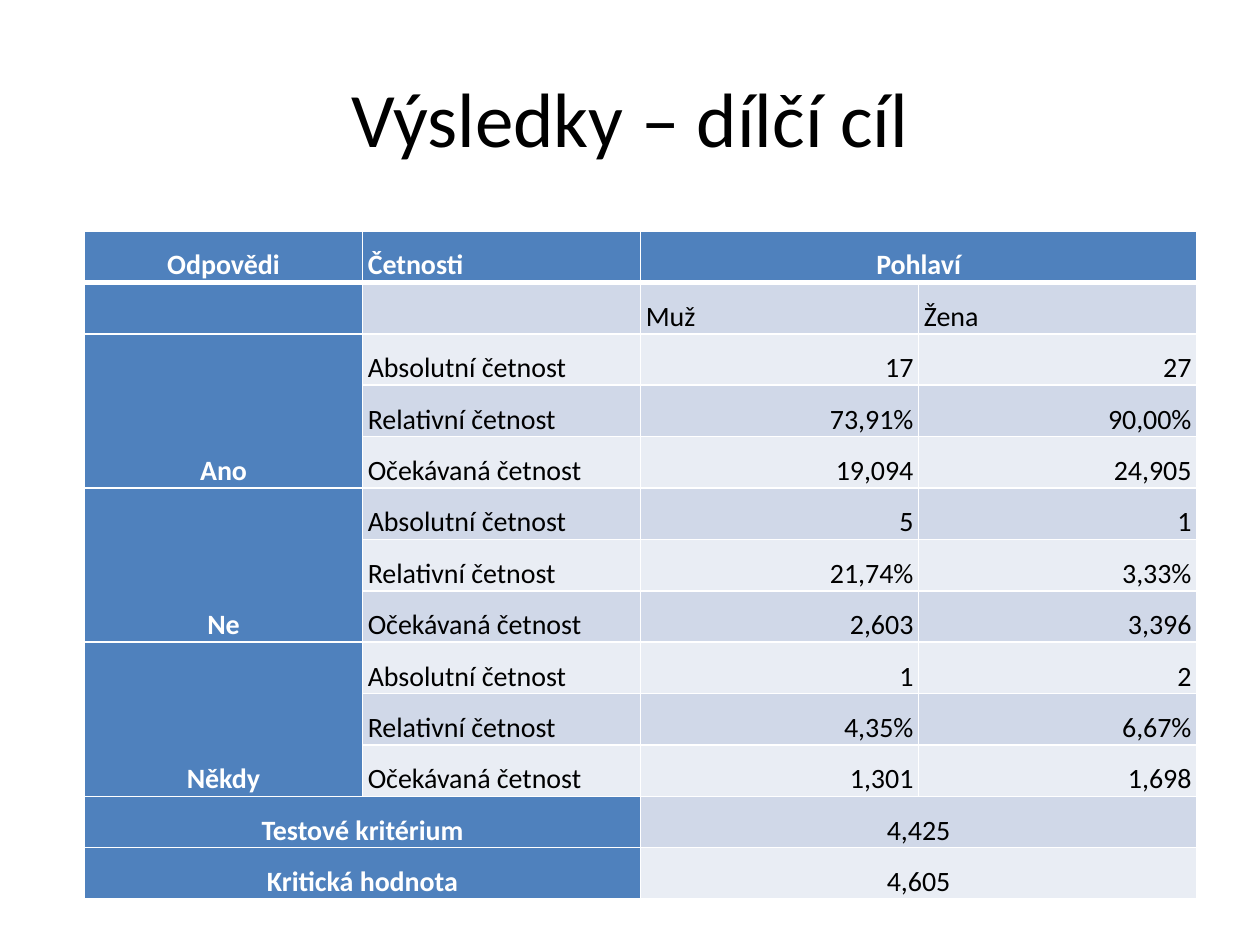
from lxml import etree
from pptx import Presentation
from pptx.dml.color import RGBColor
from pptx.enum.text import MSO_ANCHOR, PP_ALIGN
from pptx.oxml.ns import qn
from pptx.util import Pt

LEFT, CENTER, RIGHT = PP_ALIGN.LEFT, PP_ALIGN.CENTER, PP_ALIGN.RIGHT
MIDDLE, BOTTOM = MSO_ANCHOR.MIDDLE, MSO_ANCHOR.BOTTOM

BLACK = RGBColor(0x00, 0x00, 0x00)
WHITE = RGBColor(0xFF, 0xFF, 0xFF)
BLUE = RGBColor(0x4F, 0x81, 0xBD)
BANDS = (RGBColor(0xE9, 0xED, 0xF4), RGBColor(0xD0, 0xD8, 0xE8))

FONT = "Calibri"
COLUMN_WIDTH = Pt(158.9)
ROW_HEIGHT = Pt(29.3)

FREQUENCIES = ("Absolutní četnost", "Relativní četnost", "Očekávaná četnost")
ANSWERS = {
    "Ano": (("17", "27"), ("73,91%", "90,00%"), ("19,094", "24,905")),
    "Ne": (("5", "1"), ("21,74%", "3,33%"), ("2,603", "3,396")),
    "Někdy": (("1", "2"), ("4,35%", "6,67%"), ("1,301", "1,698")),
}
SUMMARY = (("Testové kritérium", "4,425"), ("Kritická hodnota", "4,605"))


def format_text(para, size, color, align, bold=False):
    para.alignment = align
    for span in para.runs:
        span.font.name = FONT
        span.font.size = Pt(size)
        span.font.bold = bold
        span.font.color.rgb = color


def add_title(page, text):
    title = page.shapes.title
    title.left, title.top, title.width, title.height = Pt(36), Pt(21.6), Pt(648), Pt(90)
    title.text_frame.text = text
    title.text_frame.vertical_anchor = MIDDLE
    format_text(title.text_frame.paragraphs[0], 44, BLACK, CENTER)


def add_border(cell, side, width):
    line = etree.SubElement(cell._tc.get_or_add_tcPr(), qn(f"a:ln{side}"), w=str(Pt(width)))
    fill = etree.SubElement(line, qn("a:solidFill"))
    etree.SubElement(fill, qn("a:srgbClr"), val=str(WHITE))


def style_cell(cell, row, is_head):
    for side in "LRTB":
        under_header = (row, side) in ((0, "B"), (1, "T"))
        add_border(cell, side, 3 if under_header else 1)
    cell.fill.solid()
    cell.fill.fore_color.rgb = BLUE if is_head else BANDS[row % 2]


def write_cell(cell, text, align, is_head=False):
    cell.margin_left = cell.margin_right = Pt(3)
    cell.margin_top = cell.margin_bottom = Pt(0)
    cell.vertical_anchor = BOTTOM
    cell.text_frame.text = text
    para = cell.text_frame.paragraphs[0]
    para.line_spacing = 1.5
    format_text(para, 16, WHITE if is_head else BLACK, align, is_head)


def add_results_table(page):
    summary_top = 2 + len(ANSWERS) * len(FREQUENCIES)
    row_count = summary_top + len(SUMMARY)
    table = page.shapes.add_table(row_count, 4, Pt(48.3), Pt(132),
                                  COLUMN_WIDTH * 4, ROW_HEIGHT * row_count).table
    for column in table.columns:
        column.width = COLUMN_WIDTH

    # Fills and borders
    for row in range(row_count):
        table.rows[row].height = ROW_HEIGHT
        for column in range(4):
            is_head = row == 0 or column == 0 or (row >= summary_top and column == 1)
            style_cell(table.cell(row, column), row, is_head)

    # Header rows
    table.cell(0, 2).merge(table.cell(0, 3))
    for column, (text, align) in enumerate(
            (("Odpovědi", CENTER), ("Četnosti", LEFT), ("Pohlaví", CENTER))):
        write_cell(table.cell(0, column), text, align, True)
    for column, text in enumerate(("Muž", "Žena"), 2):
        write_cell(table.cell(1, column), text, LEFT)

    # One block of three rows for each answer
    for index, (answer, values) in enumerate(ANSWERS.items()):
        top = 2 + index * len(FREQUENCIES)
        table.cell(top, 0).merge(table.cell(top + len(FREQUENCIES) - 1, 0))
        write_cell(table.cell(top, 0), answer, CENTER, True)
        for row, (label, pair) in enumerate(zip(FREQUENCIES, values), top):
            write_cell(table.cell(row, 1), label, LEFT)
            for column, value in enumerate(pair, 2):
                write_cell(table.cell(row, column), value, RIGHT)

    # Test summary
    for row, (label, value) in enumerate(SUMMARY, summary_top):
        for column, text in ((0, label), (2, value)):
            table.cell(row, column).merge(table.cell(row, column + 1))
            write_cell(table.cell(row, column), text, CENTER, column == 0)


def main():
    deck = Presentation()
    deck.slide_width, deck.slide_height = Pt(720), Pt(540)
    page = deck.slides.add_slide(deck.slide_layouts[5])
    add_title(page, "Výsledky – dílčí cíl")
    add_results_table(page)
    deck.save("out.pptx")


if __name__ == "__main__":
    main()
